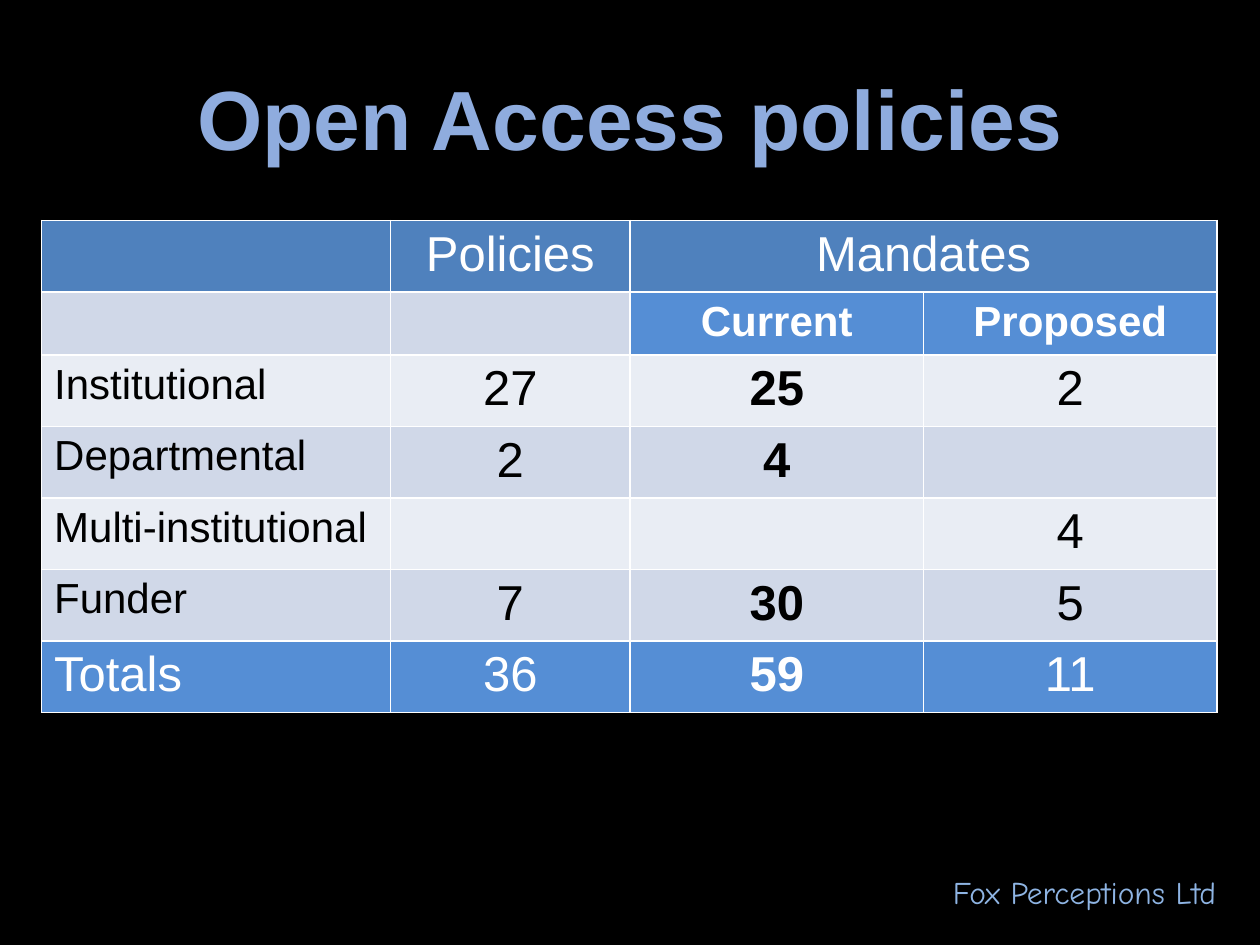
from lxml.etree import SubElement
from pptx import Presentation
from pptx.dml.color import RGBColor
from pptx.enum.text import MSO_ANCHOR as Anchor, PP_ALIGN as Align
from pptx.oxml.ns import qn
from pptx.util import Inches, Pt

BLACK = RGBColor(0x00, 0x00, 0x00)
WHITE = RGBColor(0xFF, 0xFF, 0xFF)
TITLE_BLUE = RGBColor(0x8F, 0xAC, 0xDE)
CREDIT_BLUE = RGBColor(0x8E, 0xB4, 0xE3)
HEADER_BLUE = RGBColor(0x4F, 0x81, 0xBD)
ACCENT_BLUE = RGBColor(0x55, 0x8E, 0xD5)
BAND_DARK = RGBColor(0xD0, 0xD8, 0xE8)
BAND_LIGHT = RGBColor(0xE9, 0xED, 0xF4)

POLICIES = [
    ["", "Policies", "Mandates", ""],
    ["", "", "Current", "Proposed"],
    ["Institutional", "27", "25", "2"],
    ["Departmental", "2", "4", ""],
    ["Multi-institutional", "", "", "4"],
    ["Funder", "7", "30", "5"],
    ["Totals", "36", "59", "11"],
]
COLUMN_WIDTHS = [2.77, 1.9, 2.33, 2.33]
HEADER, SUBHEADER, TOTALS = 0, 1, len(POLICIES) - 1
LABEL, CURRENT = 0, 2


def write(frame, text, size, color, align, font="Arial", bold=False):
    frame.text = text
    paragraph = frame.paragraphs[0]
    paragraph.alignment = align
    for run in paragraph.runs:
        run.font.name = font
        run.font.size = Pt(size)
        run.font.bold = bold
        run.font.color.rgb = color


def add_text(slide, box, anchor, text, size, color, align, **style):
    frame = slide.shapes.add_textbox(*map(Inches, box)).text_frame
    frame.word_wrap = True
    frame.vertical_anchor = anchor
    write(frame, text, size, color, align, **style)


def add_borders(cell):
    properties = cell._tc.get_or_add_tcPr()
    for side in ("lnL", "lnR", "lnT", "lnB"):
        line = SubElement(properties, qn(f"a:{side}"), w=str(Pt(1)))
        fill = SubElement(line, qn("a:solidFill"))
        SubElement(fill, qn("a:srgbClr"), val=str(WHITE))


def cell_fill(row, column):
    if row == HEADER:
        return HEADER_BLUE
    if row == TOTALS or (row == SUBHEADER and column >= CURRENT):
        return ACCENT_BLUE
    return BAND_DARK if row % 2 else BAND_LIGHT


def format_cell(cell, row, column, text):
    add_borders(cell)
    cell.fill.solid()
    cell.fill.fore_color.rgb = cell_fill(row, column)
    if not text:
        return
    is_body = SUBHEADER < row < TOTALS
    small = row == SUBHEADER or (is_body and column == LABEL)
    write(
        cell.text_frame,
        text,
        24 if small else 28,
        BLACK if is_body else WHITE,
        Align.LEFT if column == LABEL else Align.CENTER,
        bold=row == SUBHEADER or (row > SUBHEADER and column == CURRENT),
    )


def add_policy_table(slide):
    table = slide.shapes.add_table(
        len(POLICIES), len(COLUMN_WIDTHS),
        Inches(0.33), Inches(1.75), Inches(9.33), Inches(3.65),
    ).table
    for column, width in zip(table.columns, COLUMN_WIDTHS):
        column.width = Inches(width)
    for index, values in enumerate(POLICIES):
        table.rows[index].height = Inches(0.47 if index == SUBHEADER else 0.53)
        for column, text in enumerate(values):
            format_cell(table.cell(index, column), index, column, text)
    table.cell(HEADER, CURRENT).merge(table.cell(HEADER, CURRENT + 1))


def main():
    deck = Presentation()
    deck.slide_width, deck.slide_height = Inches(10), Inches(7.5)
    slide = deck.slides.add_slide(deck.slide_layouts[6])
    slide.background.fill.solid()
    slide.background.fill.fore_color.rgb = BLACK

    add_text(slide, (0.5, 0.3, 9, 1.25), Anchor.MIDDLE,
             "Open Access policies", 48, TITLE_BLUE, Align.CENTER, bold=True)
    add_policy_table(slide)
    add_text(slide, (6.83, 6.88, 2.92, 0.4), Anchor.TOP,
             "Fox Perceptions Ltd", 18, CREDIT_BLUE, Align.RIGHT, font="Comic Neue")
    deck.save("out.pptx")


if __name__ == "__main__":
    main()
